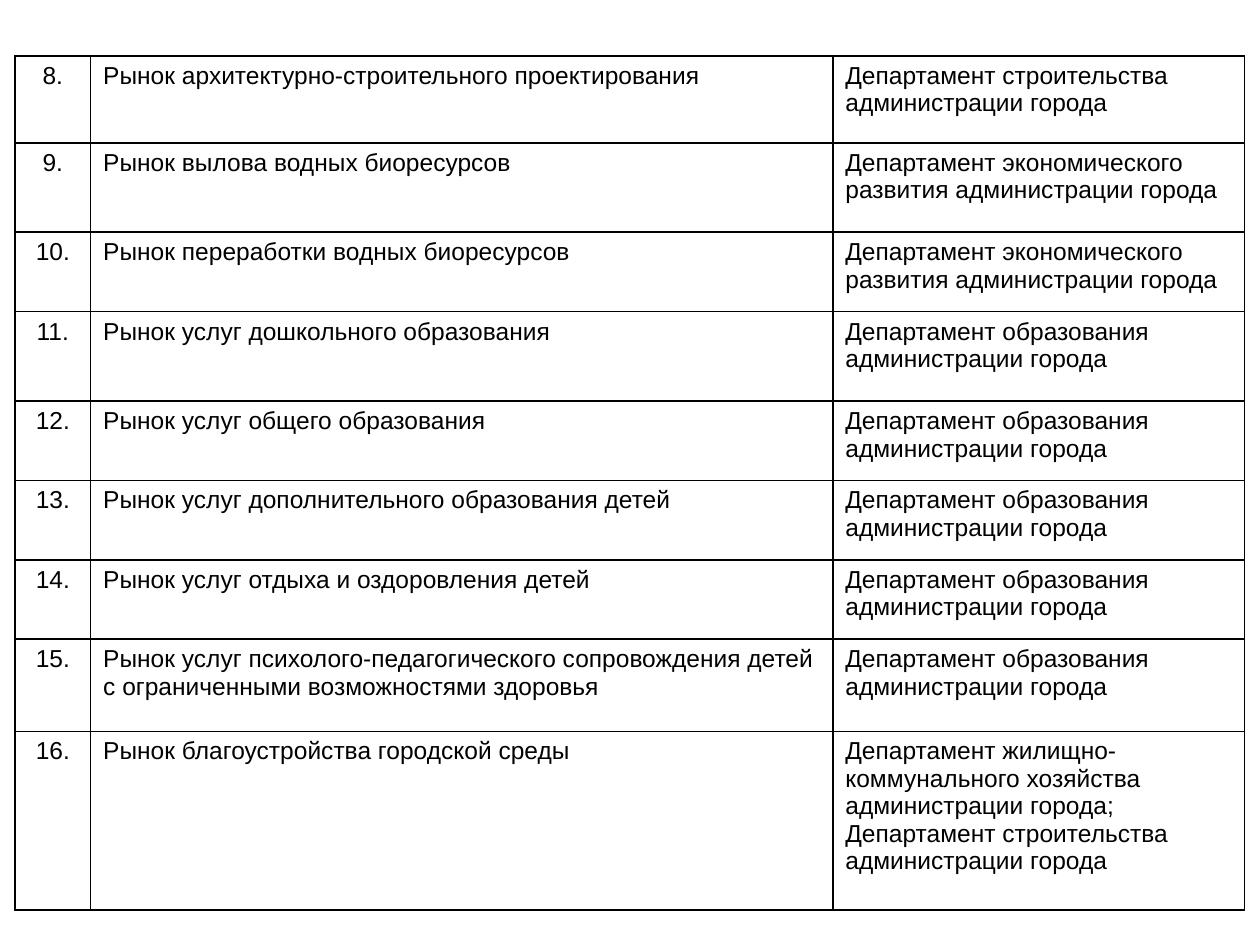
from lxml import etree
from pptx import Presentation
from pptx.dml.color import RGBColor
from pptx.enum.text import MSO_ANCHOR, PP_ALIGN
from pptx.oxml.ns import qn
from pptx.util import Pt

LEFT, CENTER = PP_ALIGN.LEFT, PP_ALIGN.CENTER
TOP = MSO_ANCHOR.TOP
BLANK_LAYOUT = 6

COLORS = {"text": "000000", "border": "000000", "cell": "FFFFFF"}

FIRST_NUMBER = 8
COLUMN_WIDTHS = [43.2, 424.1, 235.4]
ROW_HEIGHTS = [49.7, 51.1, 45.4, 51.1, 45.4, 45.4, 45.4, 52.6, 102.2]

CONSTRUCTION = "Департамент строительства администрации города"
ECONOMY = "Департамент экономического развития администрации города"
EDUCATION = "Департамент образования администрации города"
UTILITIES = "Департамент жилищно-коммунального хозяйства администрации города;"

MARKETS = [
    ("Рынок архитектурно-строительного проектирования", [CONSTRUCTION]),
    ("Рынок вылова водных биоресурсов", [ECONOMY]),
    ("Рынок переработки водных биоресурсов", [ECONOMY]),
    ("Рынок услуг дошкольного образования", [EDUCATION]),
    ("Рынок услуг общего образования", [EDUCATION]),
    ("Рынок услуг дополнительного образования детей", [EDUCATION]),
    ("Рынок услуг отдыха и оздоровления детей", [EDUCATION]),
    ("Рынок услуг психолого-педагогического сопровождения детей "
     "с ограниченными возможностями здоровья", [EDUCATION]),
    ("Рынок благоустройства городской среды", [UTILITIES, CONSTRUCTION]),
]


class SlideBuilder:
    def __init__(self, slide, font="Arial", size=14, border_width=1):
        self.slide = slide
        self.font = font
        self.size = size
        self.border_width = border_width

    def add_table(self, left, top, column_widths, row_heights, rows, alignments):
        """Add a table; each cell in rows is a list of paragraph texts."""
        shape = self.slide.shapes.add_table(
            len(row_heights), len(column_widths), Pt(left), Pt(top),
            Pt(sum(column_widths)), Pt(sum(row_heights)))
        table = shape.table
        table.first_row = False
        table.horz_banding = False
        for column, width in zip(table.columns, column_widths):
            column.width = Pt(width)
        for row, height, texts in zip(table.rows, row_heights, rows):
            row.height = Pt(height)
            for cell, paragraphs, alignment in zip(row.cells, texts, alignments):
                self.fill_cell(cell, paragraphs, alignment)

    def fill_cell(self, cell, texts, alignment):
        cell.vertical_anchor = TOP
        cell.fill.solid()
        cell.fill.fore_color.rgb = RGBColor.from_string(COLORS["cell"])
        self.add_borders(cell)
        frame = cell.text_frame
        for index, text in enumerate(texts):
            paragraph = frame.add_paragraph() if index else frame.paragraphs[0]
            paragraph.alignment = alignment
            run = paragraph.add_run()
            run.text = text
            run.font.name = self.font
            run.font.size = Pt(self.size)
            run.font.color.rgb = RGBColor.from_string(COLORS["text"])

    def add_borders(self, cell):
        """Draw all four cell edges; the schema wants them before the fill."""
        properties = cell._tc.get_or_add_tcPr()
        for position, side in enumerate(("a:lnL", "a:lnR", "a:lnT", "a:lnB")):
            line = etree.Element(qn(side), w=str(Pt(self.border_width)))
            fill = etree.SubElement(line, qn("a:solidFill"))
            etree.SubElement(fill, qn("a:srgbClr"), val=COLORS["border"])
            properties.insert(position, line)


def main():
    presentation = Presentation()
    presentation.slide_width = Pt(720)
    presentation.slide_height = Pt(540)
    layout = presentation.slide_layouts[BLANK_LAYOUT]
    builder = SlideBuilder(presentation.slides.add_slide(layout))
    rows = [([f"{number}."], [market], departments)
            for number, (market, departments) in enumerate(MARKETS, FIRST_NUMBER)]
    builder.add_table(8.6, 31.9, COLUMN_WIDTHS, ROW_HEIGHTS, rows,
                      [CENTER, LEFT, LEFT])
    presentation.save("out.pptx")


if __name__ == "__main__":
    main()
